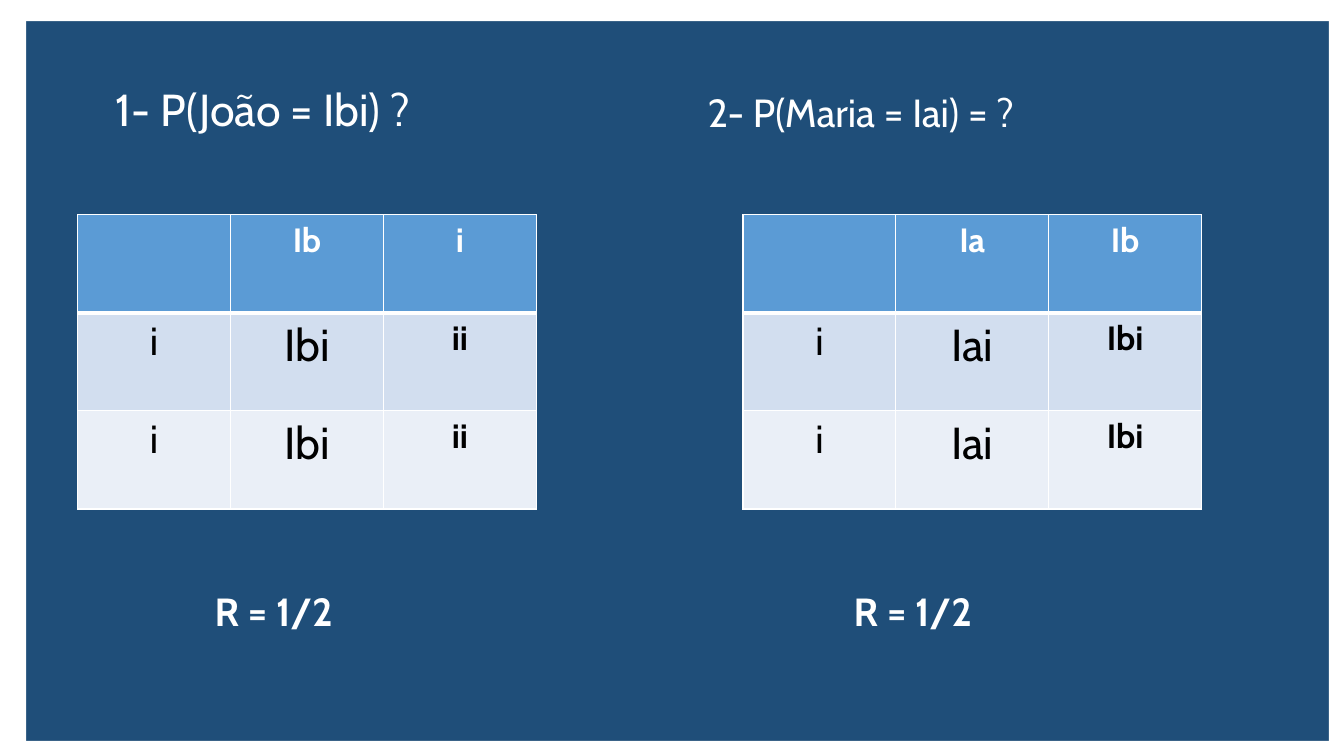
from dataclasses import dataclass

from lxml import etree
from pptx import Presentation
from pptx.dml.color import RGBColor
from pptx.enum.shapes import MSO_SHAPE
from pptx.enum.text import MSO_ANCHOR, MSO_AUTO_SIZE, PP_ALIGN
from pptx.oxml.ns import qn
from pptx.util import Inches, Pt

RECTANGLE = MSO_SHAPE.RECTANGLE
TOP = MSO_ANCHOR.TOP
NO_AUTOFIT = MSO_AUTO_SIZE.NONE
LEFT, CENTER = PP_ALIGN.LEFT, PP_ALIGN.CENTER
COMPARISON_LAYOUT = 4


@dataclass(frozen=True)
class Theme:
    font: str = "Cabin"
    background: str = "1F4E79"
    light: str = "FFFFFF"
    dark: str = "000000"
    header: str = "5B9BD5"
    bands: tuple = ("D2DEEF", "EAEFF7")
    large: int = 32
    medium: int = 28
    small: int = 24
    thin_border: int = 1
    thick_border: int = 3


class SlideBuilder:
    def __init__(self, presentation, theme):
        self.theme = theme
        self.column = presentation.slide_width / 100
        self.row = presentation.slide_height / 100
        layout = presentation.slide_layouts[COMPARISON_LAYOUT]
        self.slide = presentation.slides.add_slide(layout)
        self.paint(self.slide.background.fill, theme.background)

    def area(self, left, top, width, height):
        return (round(left * self.column), round(top * self.row),
                round(width * self.column), round(height * self.row))

    def paint(self, fill, color):
        fill.solid()
        fill.fore_color.rgb = RGBColor.from_string(color)

    def add_text(self, frame, text, size, color, bold=False, alignment=LEFT):
        paragraph = frame.paragraphs[0]
        paragraph.alignment = alignment
        paragraph.space_before = Pt(0)
        run = paragraph.add_run()
        run.text = text
        run.font.name = self.theme.font
        run.font.size = Pt(size)
        run.font.bold = bold
        run.font.color.rgb = RGBColor.from_string(color)

    def strip(self, *area):
        shape = self.slide.shapes.add_shape(RECTANGLE, *self.area(*area))
        shape.shadow.inherit = False
        self.paint(shape.fill, self.theme.light)
        shape.line.fill.background()

    def question(self, index, text, size, *area):
        shape = self.slide.placeholders[index]
        shape.left, shape.top, shape.width, shape.height = self.area(*area)
        frame = shape.text_frame
        frame.word_wrap = True
        frame.auto_size = NO_AUTOFIT
        frame.vertical_anchor = TOP
        self.add_text(frame, text, size, self.theme.light)

    def answer(self, text, *area):
        frame = self.slide.shapes.add_textbox(*self.area(*area)).text_frame
        frame.word_wrap = True
        self.add_text(frame, text, self.theme.medium, self.theme.light, bold=True)

    def border(self, cell, side, width):
        properties = cell._tc.get_or_add_tcPr()
        line = etree.SubElement(properties, qn(f"a:ln{side}"), w=str(Pt(width)))
        fill = etree.SubElement(line, qn("a:solidFill"))
        etree.SubElement(fill, qn("a:srgbClr"), val=self.theme.light)

    def cross_table(self, gametes, offspring, *area):
        theme = self.theme
        rows = [["", *gametes]] + [["i", *offspring]] * 2
        table = self.slide.shapes.add_table(3, 3, *self.area(*area)).table
        body_styles = ((theme.medium, False), (theme.large, False), (theme.small, True))
        for row_index, texts in enumerate(rows):
            is_header = row_index == 0
            color = theme.light if is_header else theme.dark
            fill = theme.header if is_header else theme.bands[row_index - 1]
            thick_side = {0: "B", 1: "T"}.get(row_index)
            for column_index, text in enumerate(texts):
                cell = table.cell(row_index, column_index)
                for side in "LRTB":
                    width = theme.thick_border if side == thick_side else theme.thin_border
                    self.border(cell, side, width)
                self.paint(cell.fill, fill)
                if text:
                    size, bold = (theme.small, True) if is_header else body_styles[column_index]
                    self.add_text(cell.text_frame, text, size, color, bold, CENTER)

    def remove_empty_placeholders(self):
        for shape in list(self.slide.placeholders):
            if not shape.has_text_frame or not shape.text_frame.text:
                shape.element.getparent().remove(shape.element)


def main():
    presentation = Presentation()
    presentation.slide_width = Inches(13.33)
    presentation.slide_height = Inches(7.5)
    theme = Theme()
    builder = SlideBuilder(presentation, theme)

    for top, height in ((0, 2.8), (98, 2)):
        builder.strip(0, top, 100, height)
    for left, width in ((0, 1.95), (98.87, 1.13)):
        builder.strip(left, 0, width, 100)

    builder.question(1, "1- P(João = Ibi) ?", theme.large, 7.88, 10.13, 32, 8.53)
    builder.question(3, "2- P(Maria = Iai) = ?", theme.medium, 51.9, 11.07, 41, 7.6)
    crosses = (
        (("Ib", "i"), ("Ibi", "ii"), 5.78, 15.23),
        (("Ia", "Ib"), ("Iai", "Ibi"), 55.28, 62.78),
    )
    for gametes, offspring, table_left, answer_left in crosses:
        builder.cross_table(gametes, offspring, table_left, 28.4, 34.13, 38.93)
        builder.answer("R = 1/2", answer_left, 77.07, 15.23, 7.6)

    builder.remove_empty_placeholders()
    presentation.save("out.pptx")


if __name__ == "__main__":
    main()
